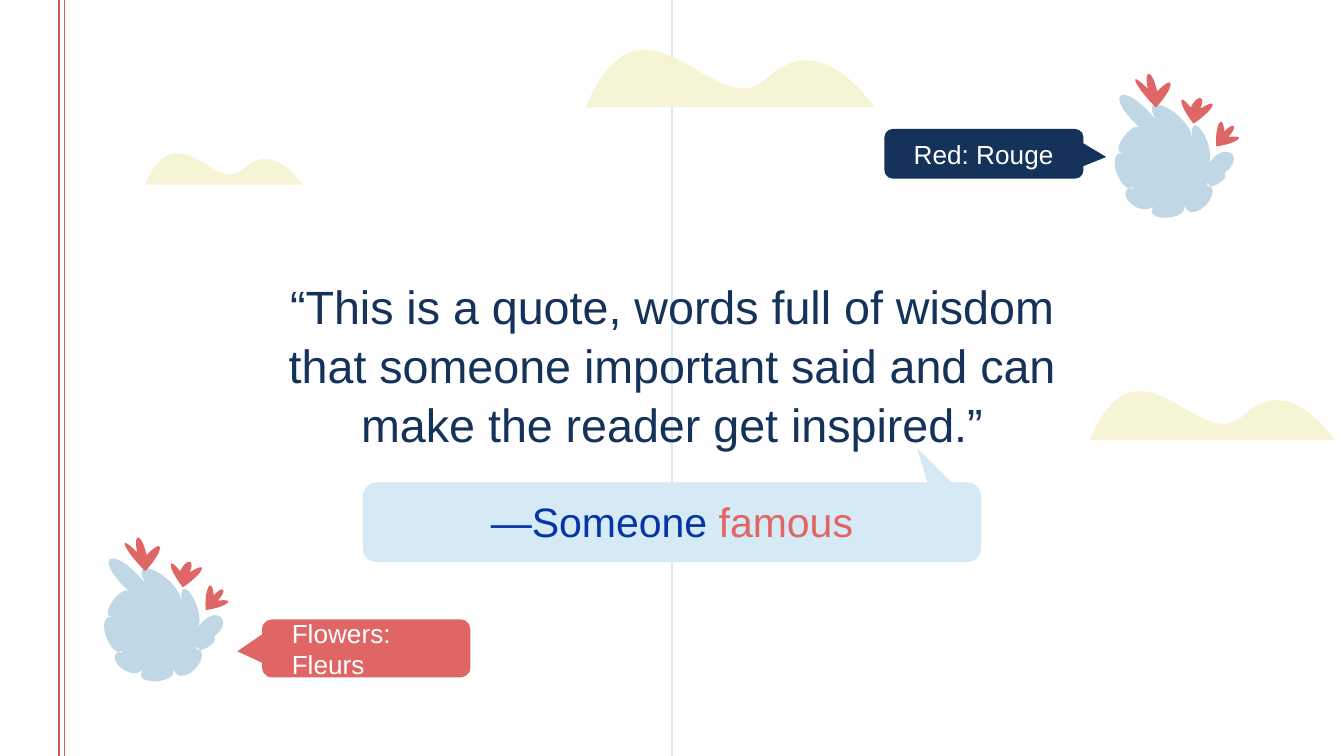
from pptx import Presentation
from pptx.dml.color import RGBColor
from pptx.enum.shapes import MSO_CONNECTOR as CONN, MSO_SHAPE as SHAPE
from pptx.enum.text import MSO_ANCHOR as ANCHOR, PP_ALIGN as ALIGN
from pptx.oxml.ns import qn
from pptx.util import Pt
from lxml.etree import SubElement

NAVY, RED, PALE = "15325B", "E06666", "D6EAF6"
SAND, LEAF, WHITE, BLUE = "F5F4D5", "C0D7E5", "FFFFFF", "0635A5"
W, H = 720, 405
QUOTE = ("“This is a quote, words full of wisdom that someone important said "
         "and can make the reader get inspired.”")
AUTHOR = [("—Someone ", BLUE), ("famous", RED)]

RULES = [(360, PALE), (31.7, "CA5E5E"), (34.6, "CA5E5E")]
CLOUDS = [(77.8, 82.1, 84.2), (583.9, 209.5, 131), (313.9, 26.6, 154.4)]
PLANTS = [(597.6, 39.6), (56.2, 288)]
LABELS = [
    ("Flowers: Fleurs", RED, (140.4, 331.9, 111.6, 31), (126, 339.8, 17.3, 15.1), 269.4, 0.414),
    ("Red: Rouge", NAVY, (473.8, 69.1, 106.6, 26.6), (578.2, 75.6, 14.4, 14.4), 90.6, 0.586),
]

CLOUD_WIDTH = 215
CLOUD = [((215, 43), (215, 43), (192, 8), (165, 8)),
         ((165, 8), (139, 8), (136, 29), (118, 29)),
         ((118, 29), (94, 29), (70, 0), (43, 0)),
         ((43, 0), (15, 0), (0, 43), (0, 43))]

BUSH = [((30, 34), (4, 16)), ((19, 41), (6, 47)), ((6, 59), (1, 74)),
        ((15, 84), (10, 95)), ((28, 99), (38, 107)), ((51, 98), (67, 98)),
        ((68, 81), (76, 82)), ((81, 74), (86, 59)), ((70, 66), (64, 42)),
        ((57, 48), (38, 25))]
FLOWERS = [
    [((58, 37), (49, 21)), ((56, 25), (63, 18)), ((63, 26), (72, 24))],
    [((75, 54), (77, 37)), ((81, 43), (88, 39)), ((84, 47), (91, 49))],
    [((30, 25), (15, 6)), ((24, 11), (25, 0)), ((31, 13), (41, 8))],
]

prs = Presentation()
prs.slide_width, prs.slide_height = Pt(W), Pt(H)
s = prs.slides.add_slide(prs.slide_layouts[5])


def rgb(value):
    return RGBColor.from_string(value)


def paint(sp, color):
    sp.shadow.inherit = False
    sp.fill.solid()
    sp.fill.fore_color.rgb = rgb(color)
    sp.line.fill.background()


def shape(kind, box, color, adj, rotation=0):
    sp = s.shapes.add_shape(kind, *map(Pt, box))
    paint(sp, color)
    sp.adjustments[0] = adj
    sp.rotation = rotation
    return sp


def write(sp, runs, size, align=ALIGN.CENTER, left=7.2, spacing=1.0):
    tf = sp.text_frame
    tf.word_wrap = True
    tf.vertical_anchor = ANCHOR.MIDDLE
    tf.margin_left = Pt(left)
    tf.margin_right = tf.margin_top = tf.margin_bottom = Pt(7.2)
    p = tf.paragraphs[0]
    p.alignment, p.line_spacing = align, spacing
    for text, color in runs:
        r = p.add_run()
        r.text = text
        r.font.name, r.font.size = "Arial", Pt(size)
        r.font.color.rgb = rgb(color)


def petals(notches, spread):
    curves = []
    for i, (start, tip) in enumerate(notches):
        end = notches[(i + 1) % len(notches)][0]
        ctrl = [(4 * t - (a + b) / 2) / 3 for a, b, t in zip(start, end, tip)]
        chord = [(b - a) * spread for a, b in zip(start, end)]
        curves.append((start, [c - d for c, d in zip(ctrl, chord)],
                       [c + d for c, d in zip(ctrl, chord)], end))
    return curves


def blob(curves, color, left, top, scale, steps=10):
    points = []
    for curve in curves:
        for i in range(steps + 1):
            t = i / steps
            u = 1 - t
            weights = (u ** 3, 3 * t * u * u, 3 * t * t * u, t ** 3)
            x, y = (sum(w * v for w, v in zip(weights, axis)) for axis in zip(*curve))
            points.append((Pt(left + x * scale), Pt(top + y * scale)))
    fb = s.shapes.build_freeform(*points[0])
    fb.add_line_segments(points[1:], close=True)
    paint(fb.convert_to_shape(), color)


for x, color in RULES:
    rule = s.shapes.add_connector(CONN.STRAIGHT, Pt(x), Pt(0), Pt(x), Pt(H))
    rule.line.color.rgb = rgb(color)
    rule.line.width = Pt(0.75)
    SubElement(rule._element.spPr, qn("a:effectLst"))

for left, top, width in CLOUDS:
    blob(CLOUD, SAND, left, top, width / CLOUD_WIDTH)

shape(SHAPE.ROUNDED_RECTANGLE, (194.4, 258.5, 331.2, 42.5), PALE, 0.167)
shape(SHAPE.ISOSCELES_TRIANGLE, (488.2, 241.2, 15.8, 29.5), PALE, 1, 315)

title = s.shapes.title
title.left, title.top, title.width, title.height = map(Pt, (239, 265.7, 242, 26.6))
write(title, AUTHOR, 22)
s.shapes._spTree.append(title._element)

quote = s.shapes.add_textbox(*map(Pt, (125.3, 137.5, 469.4, 114.5)))
write(quote, [(QUOTE, NAVY)], 25, spacing=1.05)

for left, top in PLANTS:
    blob(petals(BUSH, 0.75), LEAF, left, top, 0.72)
    for flower in FLOWERS:
        blob(petals(flower, 0.5), RED, left, top, 0.72)

for text, color, box, tip, rotation, adj in LABELS:
    label = shape(SHAPE.ROUNDED_RECTANGLE, box, color, 0.167)
    write(label, [(text, WHITE)], 14, align=ALIGN.LEFT, left=14.4)
    shape(SHAPE.ISOSCELES_TRIANGLE, tip, color, adj, rotation)

prs.save("out.pptx")
